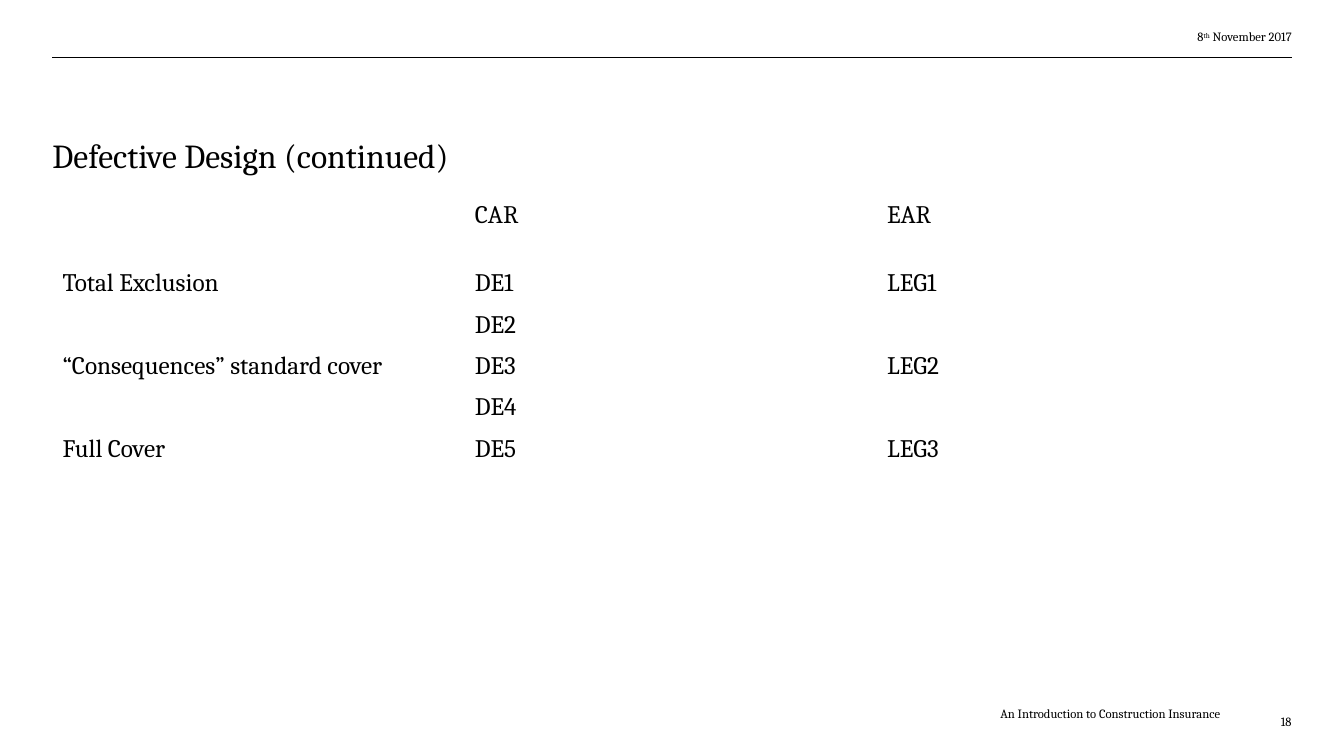
from lxml import etree
from pptx import Presentation
from pptx.dml.color import RGBColor
from pptx.enum.shapes import MSO_CONNECTOR
from pptx.enum.text import MSO_ANCHOR, PP_ALIGN
from pptx.oxml.ns import qn
from pptx.util import Inches, Pt

LEFT, RIGHT = PP_ALIGN.LEFT, PP_ALIGN.RIGHT
TOP, MIDDLE, BOTTOM = MSO_ANCHOR.TOP, MSO_ANCHOR.MIDDLE, MSO_ANCHOR.BOTTOM
STRAIGHT = MSO_CONNECTOR.STRAIGHT

# Content
TITLE = "Defective Design (continued)"
COVERS = [
    ("", "CAR", "EAR"),
    ("Total Exclusion", "DE1", "LEG1"),
    ("", "DE2", ""),
    ("“Consequences” standard cover", "DE3", "LEG2"),
    ("", "DE4", ""),
    ("Full Cover", "DE5", "LEG3"),
]
# Text pieces with their baseline shift in percent
DATE = [("8", 0), ("th", 30), (" November 2017", 0)]
FOOTER = "An Introduction to Construction Insurance"
NUMBER = "18"

# Layout
FONT, INK = "Cambria", "000000"
EDGE, WIDE = 0.52, 12.29
HEAD, ROW = 0.68, 0.41
SMALL = [
    (DATE, (10.13, 0.29, 2.68, 0.2), TOP),
    (FOOTER, (3.39, 6.98, 8.71, 0.2), MIDDLE),
    (NUMBER, (12.1, 7.06, 0.71, 0.2), MIDDLE),
]


def color(code):
    return RGBColor.from_string(code)


def write(frame, text, size=18, align=LEFT, space=None):
    para = frame.paragraphs[0]
    para.alignment = align
    if space:
        para.line_spacing = Pt(space)
    parts = [(text, 0)] if isinstance(text, str) else text
    for part, shift in parts:
        run = para.add_run()
        run.text = part
        run.font.name = FONT
        run.font.size = Pt(size)
        run.font.color.rgb = color(INK)
        if shift:
            run._r.get_or_add_rPr().set("baseline", str(shift * 1000))


def place(shape, left, top, width, height):
    shape.left, shape.top = Inches(left), Inches(top)
    shape.width, shape.height = Inches(width), Inches(height)


def trim(frame, anchor):
    frame.word_wrap = True
    frame.vertical_anchor = anchor
    frame.margin_left = frame.margin_right = 0
    frame.margin_top = frame.margin_bottom = 0


deck = Presentation()
deck.slide_width, deck.slide_height = Inches(13.33), Inches(7.5)
slide = deck.slides.add_slide(deck.slide_layouts[5])
shapes = slide.shapes

# Rule under the date
rule = shapes.add_connector(STRAIGHT, Inches(EDGE), Inches(0.57),
                            Inches(EDGE + WIDE), Inches(0.57))
rule.line.color.rgb = color(INK)
rule.line.width = Pt(1)
etree.SubElement(rule._element.spPr, qn("a:effectLst"))

# Title
title = shapes.title
place(title, EDGE, 0.6, WIDE, 1.14)
trim(title.text_frame, BOTTOM)
write(title.text_frame, TITLE, size=24, space=23)

# Table of cover levels
count = len(COVERS[0])
grid = shapes.add_table(len(COVERS), count, Inches(EDGE), Inches(1.94),
                        Inches(WIDE), Inches(HEAD + ROW * (len(COVERS) - 1))).table
grid.first_row = grid.horz_banding = False
for col in grid.columns:
    col.width = Inches(4.09)
for r, line in enumerate(COVERS):
    grid.rows[r].height = Inches(ROW if r else HEAD)
    for c, text in enumerate(line):
        cell = grid.cell(r, c)
        cell.fill.background()
        if text:
            write(cell.text_frame, text)

# Date, footer and page number
for text, spot, anchor in SMALL:
    box = shapes.add_textbox(*map(Inches, spot))
    trim(box.text_frame, anchor)
    write(box.text_frame, text, size=9, align=RIGHT)

deck.save("out.pptx")
